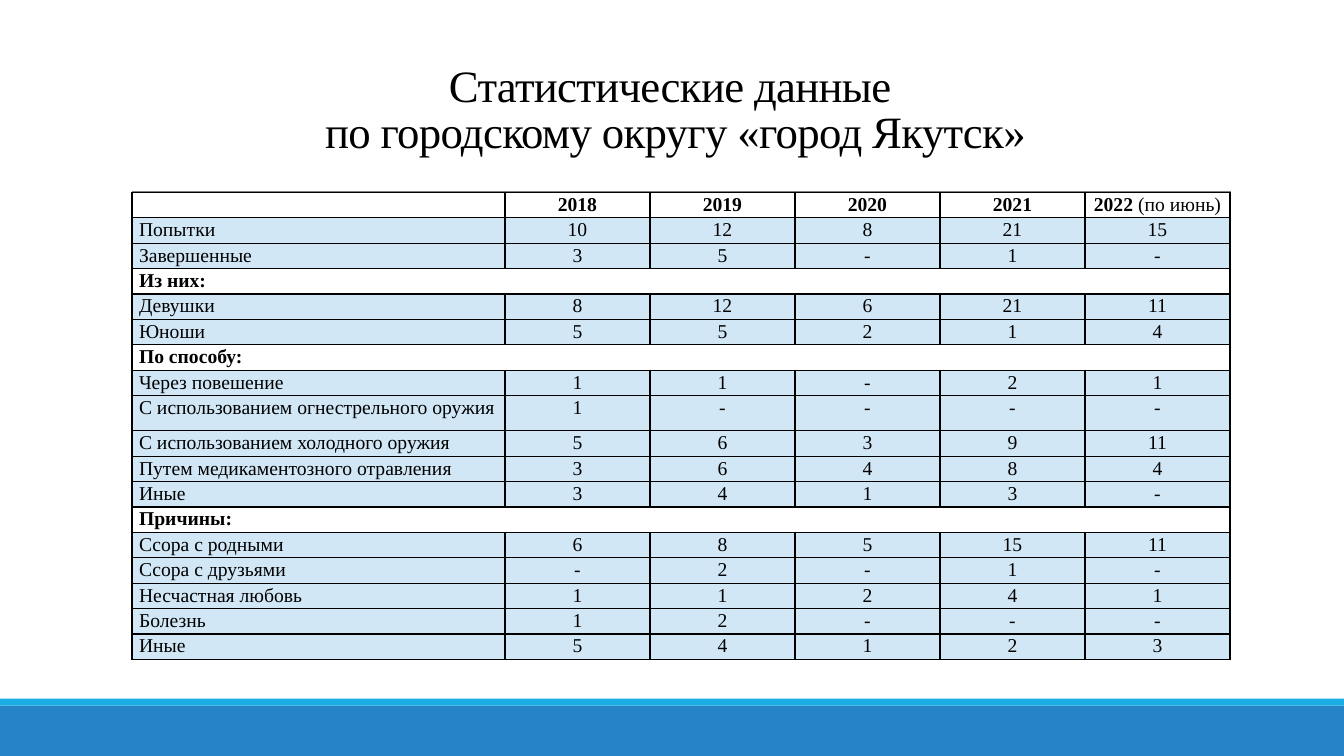
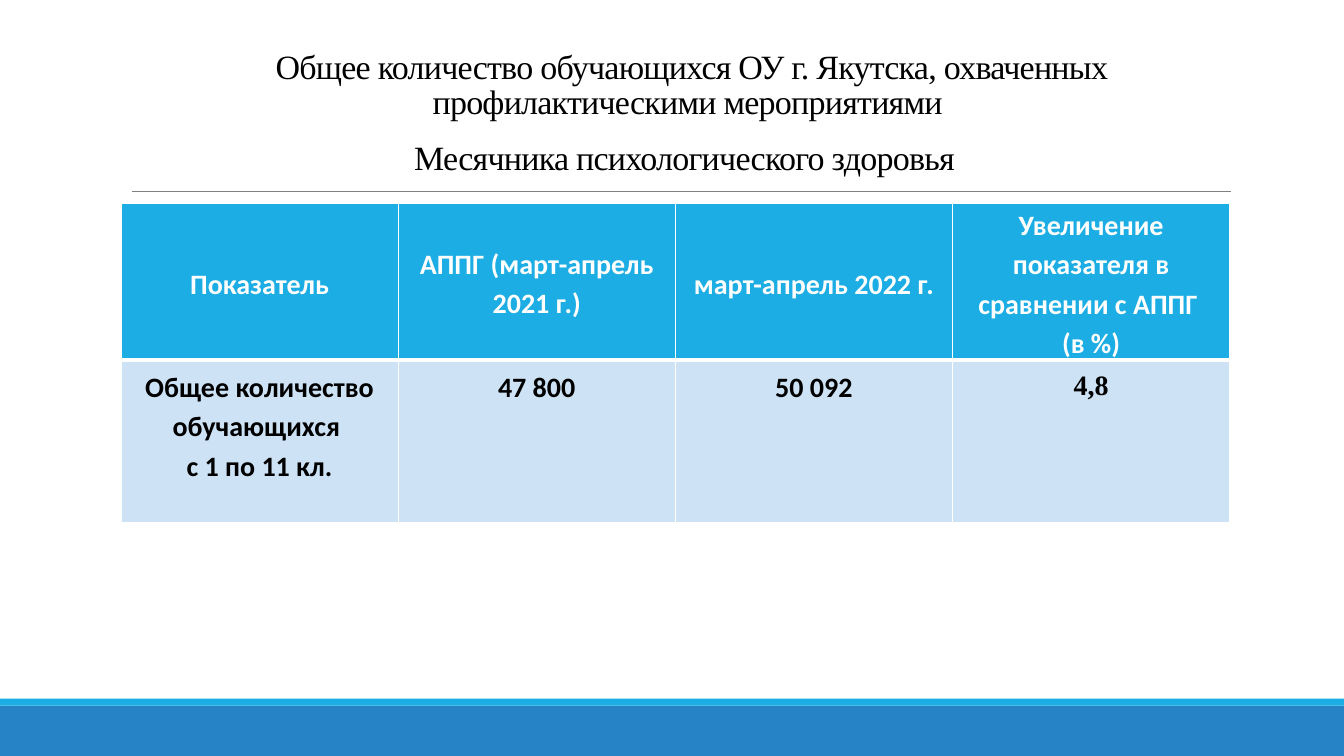
from lxml.etree import SubElement
from pptx import Presentation
from pptx.dml.color import RGBColor
from pptx.enum.shapes import MSO_CONNECTOR, MSO_SHAPE
from pptx.enum.text import MSO_ANCHOR as ANCHOR, PP_ALIGN as ALIGN
from pptx.oxml.ns import qn
from pptx.util import Pt

BLACK = RGBColor(0x00, 0x00, 0x00)
WHITE = RGBColor(0xFF, 0xFF, 0xFF)
GRAY = RGBColor(0x80, 0x80, 0x80)
BLUE = RGBColor(0x26, 0x83, 0xC6)
CYAN = RGBColor(0x1C, 0xAD, 0xE4)
PALE_BLUE = RGBColor(0xD1, 0xE7, 0xF6)
LIGHT_BLUE = RGBColor(0xCD, 0xE3, 0xF5)
SERIF, SANS = "Times New Roman", "Calibri"
WIDTH, HEIGHT = 960, 540

STATS_TITLE = ["Статистические данные \vпо городскому округу «город Якутск»"]
YEARS = ["2018", "2019", "2020", "2021", "2022 "]
LAST_YEAR_NOTE = "(по июнь)"
TALL_ROW = "С использованием огнестрельного оружия"
# A row with a label alone is a section heading
STATS = [
    ("Попытки", 10, 12, 8, 21, 15),
    ("Завершенные", 3, 5, "-", 1, "-"),
    ("Из них:",),
    ("Девушки", 8, 12, 6, 21, 11),
    ("Юноши", 5, 5, 2, 1, 4),
    ("По способу:",),
    ("Через повешение", 1, 1, "-", 2, 1),
    (TALL_ROW, 1, "-", "-", "-", "-"),
    ("С использованием холодного оружия", 5, 6, 3, 9, 11),
    ("Путем медикаментозного отравления", 3, 6, 4, 8, 4),
    ("Иные", 3, 4, 1, 3, "-"),
    ("Причины:",),
    ("Ссора с родными", 6, 8, 5, 15, 11),
    ("Ссора с друзьями", "-", 2, "-", 1, "-"),
    ("Несчастная любовь", 1, 1, 2, 4, 1),
    ("Болезнь", 1, 2, "-", "-", "-"),
    ("Иные", 5, 4, 1, 2, 3),
]

COVERAGE_TITLE = [
    "Общее количество обучающихся ОУ г. Якутска, охваченных "
    "профилактическими мероприятиями ",
    "Месячника психологического здоровья",
]
COVERAGE = [
    ("Показатель", "АППГ (март-апрель 2021 г.)", "март-апрель 2022 г.",
     "Увеличение показателя в сравнении с АППГ \n(в %)"),
    ("Общее количество обучающихся \nс 1 по 11 кл.", "47 800", "50 092", "4,8"),
]


def format_run(r, font, size, color, bold=False):
    r.font.name, r.font.size, r.font.bold = font, Pt(size), bold
    r.font.color.rgb = color


def add_band(slide, top, height, color):
    sp = slide.shapes.add_shape(MSO_SHAPE.RECTANGLE, 0, Pt(top), Pt(WIDTH), Pt(height))
    sp.shadow.inherit = False
    sp.fill.solid()
    sp.fill.fore_color.rgb = color
    sp.line.fill.background()


def new_slide(prs):
    """Add a blank slide with the footer bands and the line under the title."""
    slide = prs.slides.add_slide(prs.slide_layouts[6])
    add_band(slide, 504, 36, BLUE)
    add_band(slide, 499, 5, CYAN)
    rule = slide.shapes.add_connector(
        MSO_CONNECTOR.STRAIGHT, Pt(94), Pt(136.8), Pt(879), Pt(136.8))
    rule.line.color.rgb, rule.line.width = GRAY, Pt(0.5)
    SubElement(rule._element.spPr, qn("a:effectLst"))
    return slide


def add_title(slide, paragraphs, box, size, anchor):
    tf = slide.shapes.add_textbox(*map(Pt, box)).text_frame
    tf.word_wrap, tf.vertical_anchor = True, anchor
    tf.text = "\n".join(paragraphs)
    for p in tf.paragraphs:
        p.alignment, p.line_spacing = ALIGN.CENTER, 0.85
        for r in p.runs:
            format_run(r, SERIF, size, BLACK)
            r.font._element.set("spc", "-50")
    return tf


def add_grid(slide, left, top, widths, heights):
    """Add a table with the given column widths and row heights."""
    table = slide.shapes.add_table(
        len(heights), len(widths), Pt(left), Pt(top),
        Pt(sum(widths)), Pt(sum(heights))).table
    for col, width in zip(table.columns, widths):
        col.width = Pt(width)
    for row, height in zip(table.rows, heights):
        row.height = Pt(height)
    return table


def set_borders(cell, color, **widths):
    """Draw the four borders 1 pt wide, unless a side (L, R, T, B) says otherwise."""
    tcPr = cell._tc.get_or_add_tcPr()
    for side in "LRTB":
        ln = SubElement(tcPr, qn(f"a:ln{side}"), w=str(Pt(widths.get(side, 1))))
        fill = SubElement(ln, qn("a:solidFill"))
        SubElement(fill, qn("a:srgbClr"), val=str(color))


def set_cell(cell, text, fill, font, size, color, bold, align, spacing):
    if fill is None:
        cell.fill.background()
    else:
        cell.fill.solid()
        cell.fill.fore_color.rgb = fill
    cell.margin_left = cell.margin_right = Pt(5)
    cell.margin_top = cell.margin_bottom = 0
    cell.text_frame.text = str(text)
    for p in cell.text_frame.paragraphs:
        p.alignment, p.line_spacing = align, spacing
        for r in p.runs:
            format_run(r, font, size, color, bold)
        if not p.runs:
            SubElement(p._p, qn("a:endParaRPr"), sz=str(size * 100))


def build_stats(prs):
    slide = new_slide(prs)
    rows = [("", *YEARS)] + STATS
    heights = [25.2 if row[0] == TALL_ROW else 18.15 for row in rows]
    table = add_grid(slide, 94.3, 137.4, [266.4] + [103.6] * len(YEARS), heights)
    for i, row in enumerate(rows):
        for j in range(len(table.columns)):
            set_borders(table.cell(i, j), BLACK)
        heading = i == 0 or len(row) == 1
        if len(row) == 1:
            table.cell(i, 0).merge(table.cell(i, len(YEARS)))
        for j, text in enumerate(row):
            set_cell(table.cell(i, j), text, None if heading else PALE_BLUE,
                     SERIF, 14, BLACK, heading, ALIGN.CENTER if j else ALIGN.LEFT, 1.07)
    note = table.cell(0, len(YEARS)).text_frame.paragraphs[0].add_run()
    note.text = LAST_YEAR_NOTE
    format_run(note, SERIF, 14, BLACK)
    add_title(slide, STATS_TITLE, (86.4, 22.3, 792, 93.6), 32, ANCHOR.BOTTOM)


def build_coverage(prs):
    slide = new_slide(prs)
    tf = add_title(slide, COVERAGE_TITLE, (110, 33.8, 768, 95.8), 24.3, ANCHOR.TOP)
    tf.paragraphs[1].space_before = Pt(15)
    tf.paragraphs[1]._p.get_or_add_pPr().set("marR", str(Pt(10)))
    table = add_grid(slide, 86.4, 145.4, [198] * 4, [112, 116])
    for i, row in enumerate(COVERAGE):
        header = i == 0
        for j, text in enumerate(row):
            cell = table.cell(i, j)
            set_borders(cell, WHITE, **{"B" if header else "T": 3})
            set_cell(cell, text, CYAN if header else LIGHT_BLUE,
                     SERIF if text == "4,8" else SANS, 20,
                     WHITE if header else BLACK, True, ALIGN.CENTER, 1.15)
            if header:
                cell.vertical_anchor = ANCHOR.MIDDLE
            else:
                cell.margin_left = cell.margin_right = Pt(7.2)
                cell.margin_top = cell.margin_bottom = Pt(3.6)


def main():
    prs = Presentation()
    prs.slide_width, prs.slide_height = Pt(WIDTH), Pt(HEIGHT)
    build_stats(prs)
    build_coverage(prs)
    prs.save("out.pptx")


if __name__ == "__main__":
    main()
